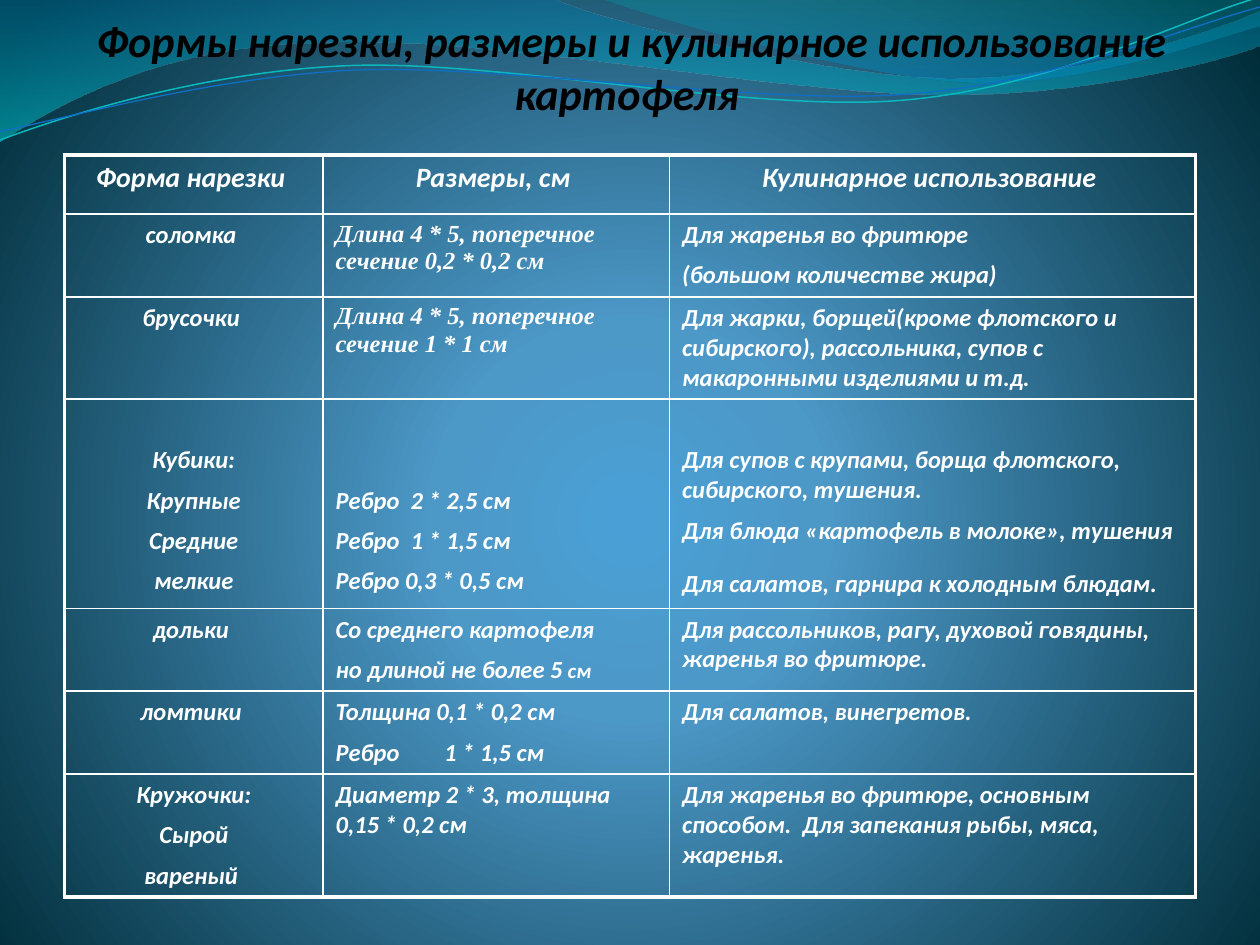
from dataclasses import dataclass
from math import cos, radians, sin
from typing import Any, Optional

from lxml.etree import SubElement
from pptx import Presentation
from pptx.dml.color import RGBColor
from pptx.enum.text import MSO_ANCHOR as Anchor, MSO_AUTO_SIZE as AutoSize, PP_ALIGN as Align
from pptx.oxml import parse_xml
from pptx.oxml.ns import nsdecls, qn
from pptx.util import Pt


@dataclass(frozen=True)
class Theme:
    text: str = "FFFFFF"
    title: str = "000000"
    font: str = "Calibri"
    serif: str = "Times New Roman"
    title_size: float = 25.2
    head_size: float = 16
    cell_size: float = 14
    unit_size: float = 12
    outer: float = 2.25
    inner: float = 1
    backdrop: tuple = ((0, "4AA0D6", 100), (25, "4C98C7", 100), (100, "002C38", 100))


THEME = Theme()


@dataclass(frozen=True)
class Wave:
    start: tuple
    segments: tuple
    stops: tuple = ()
    color: str = ""
    width: float = 0
    tilt: float = 0


@dataclass(frozen=True)
class Line:
    text: str
    tail: str = ""
    gap: float = 6
    tab: Optional[float] = None


@dataclass(frozen=True)
class Entry:
    lines: tuple
    align: Any = Align.LEFT
    font: str = THEME.font
    size: float = THEME.cell_size
    top: float = 3.6
    bottom: float = 3.6


DOWN = '<a:lin ang="5400000" scaled="0"/>'
GLOW = '<a:path path="circle"><a:fillToRect l="10000" t="110000" r="10000" b="100000"/></a:path>'
PIVOT = (359.5, 41.5)
TILT = -2.7

WAVES = (
    Wave((0, 0), (((317, 0),), ((343, 12), (478, 45), (546, 45)),
                  ((614, 45), (690, 19), (720, 6.5)), ((720, 26),),
                  ((708, 32), (626, 55), (537, 54)), ((447, 54), (275, 20), (185, 24.5)),
                  ((93, 25), (33, 60), (0, 81))),
         stops=((0, "0074A1", 45), (100, "00C6CF", 55))),
    Wave((345, 0), (((366, 8), (491, 45), (554, 47)), ((616, 50), (692, 23), (720, 15)),
                    ((720, 0),)),
         stops=((0, "00A1A9", 30), (80, "008BBF", 45))),
    Wave((0, 80), (((35, 67), (114, 41), (199, 37.5)), ((284, 34), (427, 64), (513, 57.5)),
                   ((600, 51), (675, 11), (719, -1.4))), color="0AB8BF", width=0.85, tilt=TILT),
    Wave((0, 75), (((34, 69), (118, 44), (204, 40)), ((290, 37), (433, 60), (516, 54)),
                   ((602, 48), (678, 15), (720, 4))), color="0F6FC6", width=0.75, tilt=TILT),
)


def entry(*lines: Any, **options: Any) -> Entry:
    return Entry(tuple(Line(item) if isinstance(item, str) else item for item in lines), **options)


def centered(*lines: Any, **options: Any) -> Entry:
    return entry(*lines, align=Align.CENTER, **options)


COLUMNS = (147.7, 198, 300.5)
HEIGHTS = (33.8, 40.5, 55.5, 100, 46, 46, 64)
HEADINGS = ("Форма нарезки ", "Размеры, см ", "Кулинарное использование ")
ROWS = (
    tuple(centered(heading, size=THEME.head_size) for heading in HEADINGS),
    (centered("соломка "),
     entry("Длина 4 * 5, поперечное сечение 0,2 * 0,2 см", font=THEME.serif),
     entry("Для жаренья во фритюре", "(большом количестве жира)")),
    (centered("брусочки "),
     entry("Длина 4 * 5, поперечное сечение 1 * 1 см", font=THEME.serif),
     entry("Для жарки, борщей(кроме флотского и сибирского), рассольника, супов с "
           "макаронными изделиями и т.д.")),
    (centered("Кубики:", "Крупные", "Средние", "мелкие", top=26.7),
     entry("Ребро  2 * 2,5 см", "Ребро  1 * 1,5 см", "Ребро 0,3 * 0,5 см",
           align=Align.JUSTIFY, top=49.8),
     entry("Для супов с крупами, борща флотского, сибирского, тушения.",
           "Для блюда «картофель в молоке», тушения",
           Line("Для салатов, гарнира к холодным блюдам.", gap=13.5), top=26.7, bottom=5.4)),
    (centered("дольки "),
     entry("Со среднего картофеля", Line("но длиной не более 5", tail=" см")),
     entry("Для рассольников, рагу, духовой говядины, жаренья во фритюре.")),
    (centered("ломтики "),
     entry("Толщина 0,1 * 0,2 см", Line("Ребро\t1 * 1,5 см", tab=62)),
     entry("Для салатов, винегретов.")),
    (centered("Кружочки:", "Сырой", "вареный "),
     entry("Диаметр 2 * 3, толщина 0,15 * 0,2 см"),
     entry("Для жаренья во фритюре, основным способом.  Для запекания рыбы, мяса, жаренья.")),
)


def apply(target: Any, values: dict) -> None:
    for key, value in values.items():
        setattr(target, key, value)


def add_run(paragraph: Any, text: str, size: float, font: str, color: str) -> None:
    run = paragraph.add_run()
    run.text = text
    apply(run.font, {"name": font, "size": Pt(size), "bold": True, "italic": True})
    run.font.color.rgb = RGBColor.from_string(color)


def set_gradient(properties: Any, stops: tuple, direction: str) -> None:
    marks = "".join(
        f'<a:gs pos="{place * 1000}"><a:srgbClr val="{color}">'
        f'<a:alpha val="{alpha * 1000}"/></a:srgbClr></a:gs>' for place, color, alpha in stops)
    gradient = parse_xml(f'<a:gradFill {nsdecls("a")} rotWithShape="1">'
                         f'<a:gsLst>{marks}</a:gsLst>{direction}</a:gradFill>')
    properties.replace(properties.find(qn("a:solidFill")), gradient)


def turn(point: tuple, angle: float) -> tuple:
    dx, dy = point[0] - PIVOT[0], point[1] - PIVOT[1]
    c, s = cos(radians(angle)), sin(radians(angle))
    return Pt(PIVOT[0] + dx * c - dy * s), Pt(PIVOT[1] + dx * s + dy * c)


def bend(ribbon: Any, segments: tuple) -> None:
    steps = iter(list(ribbon._element.iter(qn("a:lnTo"))))
    for segment in segments:
        first, *others = [next(steps) for _ in segment]
        if others:
            first.tag = qn("a:cubicBezTo")
            for step in others:
                first.append(step[0])
                step.getparent().remove(step)


def draw_wave(slide: Any, wave: Wave) -> None:
    points = [wave.start, *(point for segment in wave.segments for point in segment)]
    outline = [turn(point, -wave.tilt) for point in points]
    builder = slide.shapes.build_freeform(*outline[0])
    builder.add_line_segments(outline[1:], close=False)
    ribbon = builder.convert_to_shape()
    bend(ribbon, wave.segments)
    ribbon.rotation = wave.tilt
    ribbon.shadow.inherit = False
    if wave.stops:
        SubElement(next(ribbon._element.iter(qn("a:path"))), qn("a:close"))
        ribbon.fill.solid()
        set_gradient(ribbon._element.spPr, wave.stops, DOWN)
        ribbon.line.fill.background()
    else:
        ribbon.fill.background()
        ribbon.line.color.rgb = RGBColor.from_string(wave.color)
        ribbon.line.width = Pt(wave.width)


def draw_title(slide: Any, text: str) -> None:
    title = slide.shapes.title
    apply(title, {"left": Pt(34), "top": Pt(17), "width": Pt(654), "height": Pt(51)})
    apply(title.text_frame, {"word_wrap": True, "auto_size": AutoSize.NONE,
                             "vertical_anchor": Anchor.BOTTOM, "margin_left": 0,
                             "margin_top": Pt(3.6), "margin_right": 0, "margin_bottom": 0})
    paragraph = title.text_frame.paragraphs[0]
    paragraph.alignment = Align.CENTER
    add_run(paragraph, text, THEME.title_size, THEME.font, THEME.title)
    slide.shapes._spTree.append(title._element)


def set_borders(cell: Any, edges: dict) -> None:
    properties = cell._tc.get_or_add_tcPr()
    for index, (side, is_outer) in enumerate(edges.items()):
        width = Pt(THEME.outer if is_outer else THEME.inner)
        properties.insert(index, parse_xml(
            f'<a:ln{side} {nsdecls("a")} w="{width}"><a:solidFill>'
            f'<a:srgbClr val="{THEME.text}"/></a:solidFill></a:ln{side}>'))


def fill_cell(cell: Any, content: Entry) -> None:
    cell.fill.background()
    apply(cell, {"margin_top": Pt(content.top), "margin_bottom": Pt(content.bottom)})
    frame = cell.text_frame
    for index, line in enumerate(content.lines):
        paragraph = frame.add_paragraph() if index else frame.paragraphs[0]
        paragraph.alignment = content.align
        if index:
            paragraph.space_before = Pt(line.gap)
        if line.tab is not None:
            tabs = SubElement(paragraph._p.get_or_add_pPr(), qn("a:tabLst"))
            SubElement(tabs, qn("a:tab"), pos=str(Pt(line.tab)), algn="l")
        add_run(paragraph, line.text, content.size, content.font, THEME.text)
        if line.tail:
            add_run(paragraph, line.tail, THEME.unit_size, content.font, THEME.text)


def draw_table(slide: Any) -> None:
    frame = slide.shapes.add_table(len(ROWS), len(COLUMNS), Pt(36.9), Pt(88.5),
                                   Pt(sum(COLUMNS)), Pt(sum(HEIGHTS)))
    cuts = frame.table
    apply(cuts, {"first_row": False, "horz_banding": False})
    for column, width in zip(cuts.columns, COLUMNS):
        column.width = Pt(width)
    for r, (height, entries) in enumerate(zip(HEIGHTS, ROWS)):
        cuts.rows[r].height = Pt(height)
        for c, content in enumerate(entries):
            cell = cuts.cell(r, c)
            fill_cell(cell, content)
            set_borders(cell, {"L": c == 0, "R": c == len(COLUMNS) - 1,
                               "T": r == 0, "B": r == len(ROWS) - 1})
    frame.height = Pt(420.5)


def main() -> None:
    deck = Presentation()
    apply(deck, {"slide_width": Pt(720), "slide_height": Pt(540)})
    slide = deck.slides.add_slide(deck.slide_layouts[5])
    backdrop = slide.background.fill
    backdrop.solid()
    backdrop.fore_color.rgb = RGBColor.from_string(THEME.backdrop[0][1])
    set_gradient(slide._element.cSld.find(qn("p:bg")).find(qn("p:bgPr")), THEME.backdrop, GLOW)
    for wave in WAVES:
        draw_wave(slide, wave)
    draw_title(slide, "Формы нарезки, размеры и кулинарное использование картофеля ")
    draw_table(slide)
    deck.save("out.pptx")


if __name__ == "__main__":
    main()
